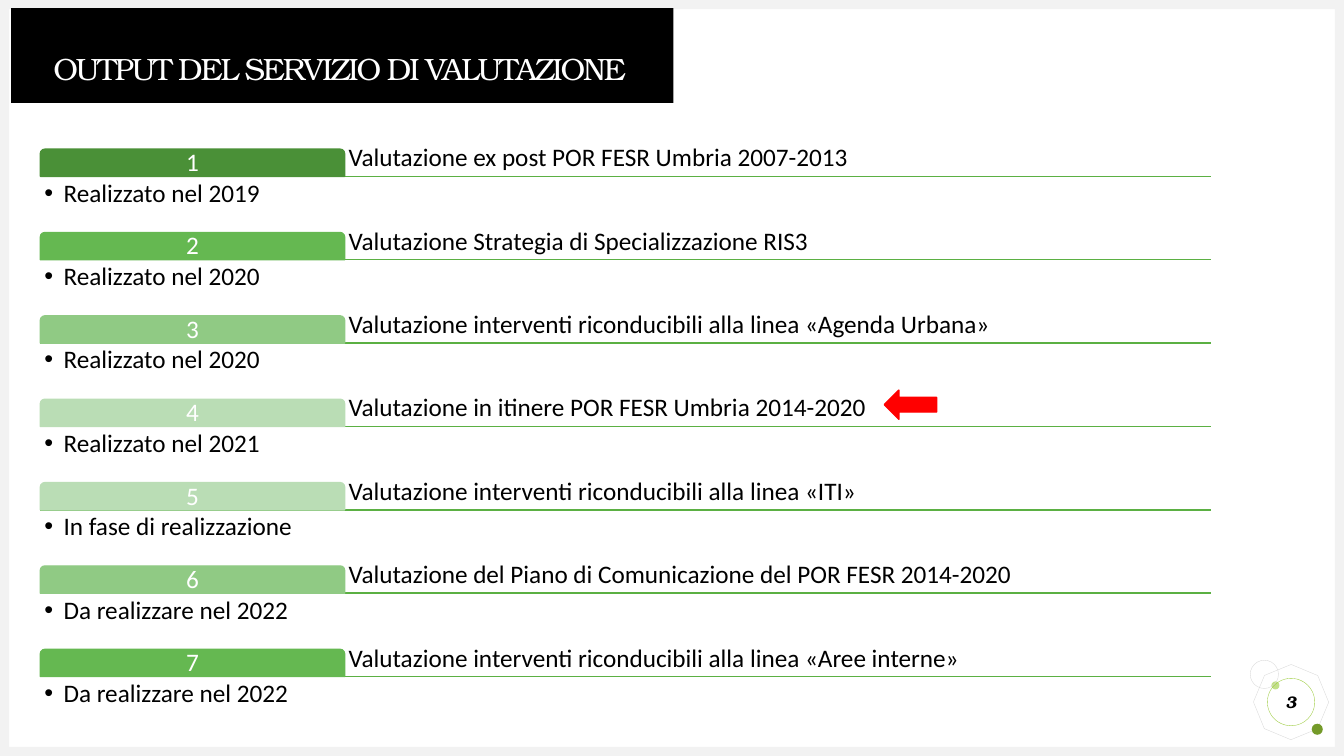
from collections import namedtuple

from lxml.etree import SubElement
from pptx import Presentation
from pptx.dml.color import RGBColor
from pptx.enum.shapes import MSO_CONNECTOR, MSO_SHAPE as Preset
from pptx.enum.text import MSO_ANCHOR as Anchor, MSO_AUTO_SIZE, PP_ALIGN as Align
from pptx.oxml.ns import qn
from pptx.util import Inches, Pt

Box = namedtuple("Box", "left top width height")

SLIDE = Box(0, 0, 13.33, 7.5)
BAND = 0.09
COLORS = {
    "black": "000000", "white": "FFFFFF", "frame": "F2F2F2", "outline": "D9D9D9",
    "lime": "9ACB39", "pale lime": "C2E088", "olive": "749A29", "rule": "5BB043",
    "green 1": "4A9037", "green 2": "65B851", "green 3": "90CA84", "green 4": "BADDB5",
    "arrow": "FF0000",
}
BODY = {"name": "Calibri", "size": Pt(18)}
HEADING = {"name": "TeX Gyre Bonum", "size": Pt(22)}
PAGE = {"name": "TeX Gyre Bonum", "size": Pt(12), "bold": True, "italic": True}

# Tab colour, evaluation, status, alignment
OUTPUTS = [
    ("green 1", "Valutazione ex post POR FESR Umbria 2007-2013", "Realizzato nel 2019", Align.LEFT),
    ("green 2", "Valutazione Strategia di Specializzazione RIS3", "Realizzato nel 2020", Align.LEFT),
    ("green 3", "Valutazione interventi riconducibili alla linea «Agenda Urbana»",
     "Realizzato nel 2020", Align.LEFT),
    ("green 4", "Valutazione in itinere POR FESR Umbria 2014-2020", "Realizzato nel 2021", Align.LEFT),
    ("green 4", "Valutazione interventi riconducibili alla linea «ITI»",
     "In fase di realizzazione", Align.JUSTIFY),
    ("green 3", "Valutazione del Piano di Comunicazione del POR FESR 2014-2020",
     "Da realizzare nel 2022", Align.LEFT),
    ("green 2", "Valutazione interventi riconducibili alla linea «Aree interne»",
     "Da realizzare nel 2022", Align.LEFT),
]


def color(name):
    return RGBColor.from_string(COLORS[name])


def inches(box):
    return [Inches(length) for length in box]


def add_shape(slide, preset, box, fill=None, line=None, weight=1):
    shape = slide.shapes.add_shape(preset, *inches(box))
    shape.shadow.inherit = False
    if fill:
        shape.fill.solid()
        shape.fill.fore_color.rgb = color(fill)
    else:
        shape.fill.background()
    if line:
        shape.line.color.rgb = color(line)
        shape.line.width = Pt(weight)
    else:
        shape.line.fill.background()
    return shape


def write(shape, text, font, ink="black", align=Align.LEFT, anchor=Anchor.TOP,
          margins=(0.04,) * 4, spacing=0.9):
    frame = shape.text_frame
    left, top, right, bottom = inches(margins)
    settings = {"word_wrap": True, "auto_size": MSO_AUTO_SIZE.NONE, "vertical_anchor": anchor,
                "margin_left": left, "margin_top": top,
                "margin_right": right, "margin_bottom": bottom}
    for name, value in settings.items():
        setattr(frame, name, value)
    paragraph = frame.paragraphs[0]
    paragraph.alignment = align
    paragraph.line_spacing = spacing
    run = paragraph.add_run()
    run.text = text
    for name, value in font.items():
        setattr(run.font, name, value)
    run.font.color.rgb = color(ink)
    return paragraph


def add_bullet(paragraph, indent):
    properties = paragraph._p.get_or_add_pPr()
    properties.set("marL", str(Inches(indent)))
    properties.set("indent", str(-Inches(indent)))
    SubElement(properties, qn("a:buFont"), typeface="Arial")
    SubElement(properties, qn("a:buChar"), char="•")


def add_frame(slide, box):
    right = box.left + box.width - BAND
    bottom = box.top + box.height - BAND
    for band in (Box(box.left, bottom, box.width, BAND), Box(box.left, box.top, box.width, BAND),
                 Box(box.left, box.top, BAND, box.height), Box(right, box.top, BAND, box.height)):
        add_shape(slide, Preset.RECTANGLE, band, "frame")


def add_title(slide, box):
    title = slide.shapes.title
    title.left, title.top, title.width, title.height = inches(box)
    title.fill.solid()
    title.fill.fore_color.rgb = color("black")
    paragraph = write(title, "OUTPUT DEL SERVIZIO DI VALUTAZIONE", HEADING, "white",
                      Align.RIGHT, Anchor.BOTTOM, (0.31, 0, 0.47, 0.16))
    paragraph.runs[0].font._element.set("spc", "-150")
    # Bring the title in front of the frame
    title.element.getparent().append(title.element)


def add_page_badge(slide, box, number):
    def part(preset, x, y, size, **style):
        return add_shape(slide, preset, Box(box.left + x, box.top + y, size, size), **style)

    octagon = part(Preset.OCTAGON, 0.06, 0.07, 0.69, line="outline", weight=0.25)
    octagon.rotation = 22.7
    part(Preset.OVAL, 0.21, 0.21, 0.08, fill="pale lime")
    part(Preset.OVAL, 0.61, 0.63, 0.11, fill="olive")
    part(Preset.OVAL, 0, 0, 0.28, line="outline", weight=0.25)
    ring = part(Preset.OVAL, 0.17, 0.18, 0.47, line="lime", weight=0.25)
    write(ring, number, PAGE, align=Align.CENTER, anchor=Anchor.MIDDLE,
          margins=(0,) * 4, spacing=1.0)


def add_rule(slide, left, right, y):
    rule = slide.shapes.add_connector(MSO_CONNECTOR.STRAIGHT, *inches((left, y, right, y)))
    rule.line.color.rgb = color("rule")
    rule.line.width = Pt(1)
    SubElement(rule.element.spPr, qn("a:effectLst"))


def add_output_row(slide, box, number, output):
    tint, evaluation, status, align = output
    tab_width = box.width * 0.26
    head_height = box.height / 3
    rule_y = box.top + head_height
    add_rule(slide, box.left, box.left + box.width, rule_y)

    # Evaluation name beside the tab
    name_box = Box(box.left + tab_width, box.top, box.width - tab_width, head_height)
    name = slide.shapes.add_textbox(*inches(name_box))
    write(name, evaluation, BODY, align=align, anchor=Anchor.BOTTOM)

    # Numbered tab
    tab = add_shape(slide, Preset.ROUND_2_SAME_RECTANGLE,
                    Box(box.left, box.top, tab_width, head_height), tint, tint)
    write(tab, str(number), BODY, "white", Align.CENTER, Anchor.MIDDLE)

    # Status below the rule
    status_box = Box(box.left, rule_y, box.width, box.height - head_height)
    add_bullet(write(slide.shapes.add_textbox(*inches(status_box)), status, BODY), 0.19)


def add_output_list(slide, box, outputs, pitch=0.827, row_height=0.81):
    for index, output in enumerate(outputs):
        row = Box(box.left, box.top + index * pitch, box.width, row_height)
        add_output_row(slide, row, index + 1, output)


def main():
    presentation = Presentation()
    presentation.slide_width, presentation.slide_height = inches(SLIDE[2:])
    slide = presentation.slides.add_slide(presentation.slide_layouts[5])
    add_frame(slide, SLIDE)
    add_title(slide, Box(0.11, 0.08, 6.57, 0.94))
    add_page_badge(slide, Box(12.4, 6.55, 0.75, 0.76), "3")
    add_output_list(slide, Box(0.4, 1.48, 11.61, 5.77), OUTPUTS)
    # Marker on the current evaluation
    add_shape(slide, Preset.LEFT_ARROW, Box(8.77, 3.87, 0.52, 0.29), "arrow", "arrow")
    presentation.save("out.pptx")


if __name__ == "__main__":
    main()
